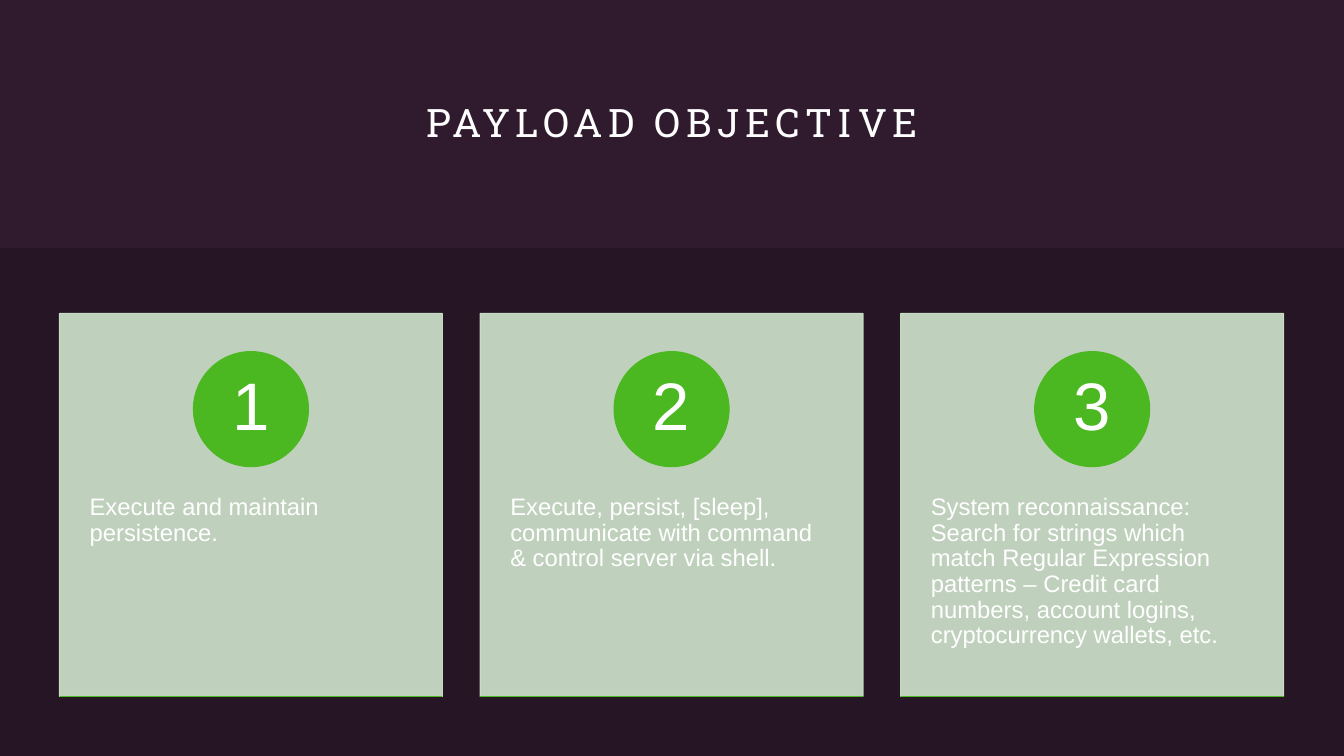
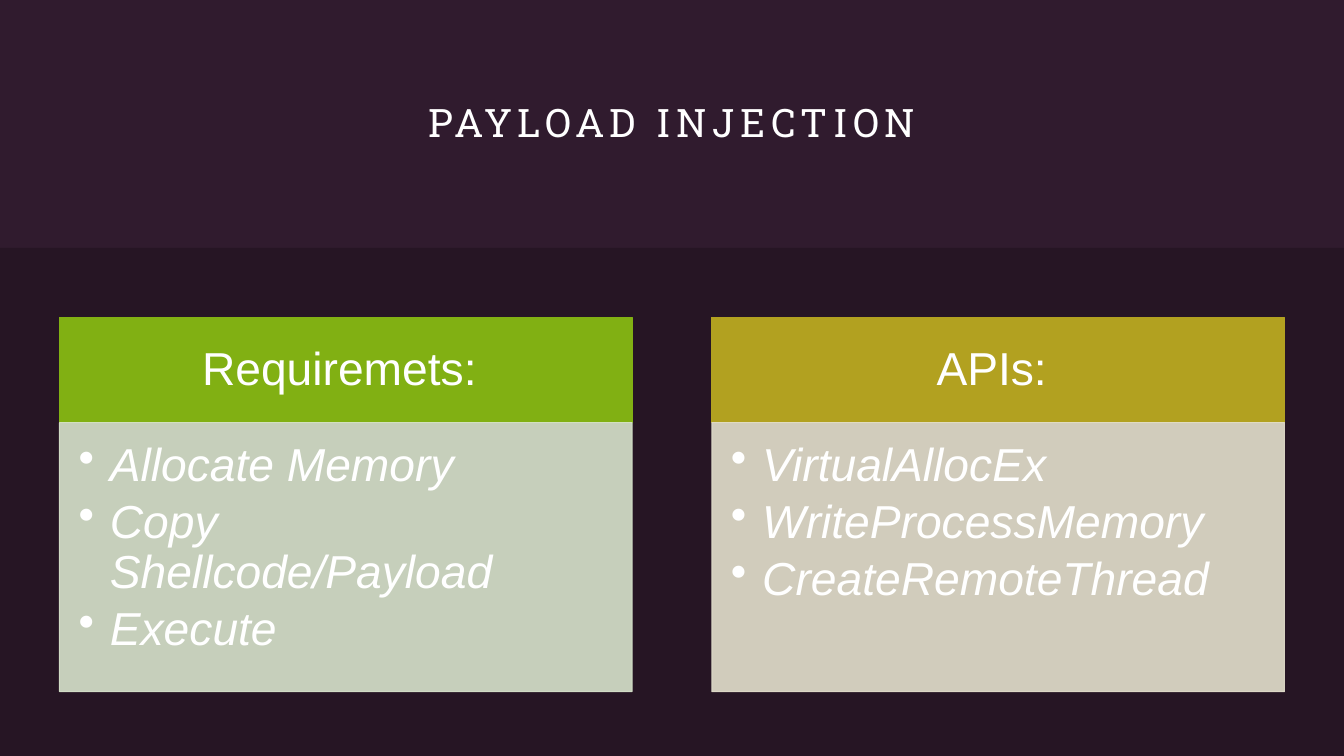
from dataclasses import dataclass

from lxml import etree
from pptx import Presentation
from pptx import util as u
from pptx.dml.color import RGBColor
from pptx.enum import shapes, text
from pptx.oxml import ns

WIDTH, HEIGHT = 33.87, 19.05
LEFT = 1.5
PLUM, NIGHT, WHITE = "301B2E", "261524", "FFFFFF"
GREEN, MINT = "4CB821", "D0E6CD"
RECT, OVAL = shapes.MSO_SHAPE.RECTANGLE, shapes.MSO_SHAPE.OVAL
TOP, MIDDLE = text.MSO_ANCHOR.TOP, text.MSO_ANCHOR.MIDDLE
CENTER, START = text.PP_ALIGN.CENTER, text.PP_ALIGN.LEFT


@dataclass
class Box:
    """A place on the slide, in centimetres."""
    x: float
    y: float
    w: float
    h: float

    def emu(self) -> list:
        """Give the four lengths in slide units."""
        return [u.Cm(n) for n in (self.x, self.y, self.w, self.h)]


@dataclass
class Style:
    """The look of a block of text; insets run left, top, right, bottom."""
    size: float
    align: int = CENTER
    anchor: int = MIDDLE
    inset: tuple = (0, 0, 0, 0)
    face: str = "Arial"
    lead: float = 0.9
    after: float = 0
    italic: bool = False
    bullet: bool = False
    track: int = 0


@dataclass
class Column:
    """A headed list with its two colours."""
    head: str
    items: list
    dark: str
    pale: str


TITLE = Style(28, face="Roboto Slab", lead=1, track=400)
DIGIT = Style(48)
NOTE = Style(17, START, TOP, (0.76, 4.57, 0.76, 0.9))
HEAD = Style(33, inset=(0.66, 0.38, 0.66, 0.38))
LIST = Style(33, START, TOP, (0.48, 0.48, 0.66, 0.74), after=5, italic=True, bullet=True)

GOALS = [
    "Execute and maintain persistence.",
    "Execute, persist, [sleep], communicate with command & control server via shell.",
    "System reconnaissance: Search for strings which match Regular Expression "
    "patterns – Credit card numbers, account logins, cryptocurrency wallets, etc.",
]
COLUMNS = [
    Column("Requiremets: ", ["Allocate Memory", "Copy Shellcode/Payload", "Execute"],
           "81B013", "D8E4CC"),
    Column("APIs: ", ["VirtualAllocEx", "WriteProcessMemory", "CreateRemoteThread"],
           "B2A120", "E4E0CD"),
]


def color(code: str) -> RGBColor:
    """Turn a hex string into a colour."""
    return RGBColor.from_string(code)


def assign(target, values: dict) -> None:
    """Set every named attribute on the target."""
    for name, value in values.items():
        setattr(target, name, value)


def write(shape, lines: list, style: Style) -> None:
    """Fill a shape with styled paragraphs."""
    frame = shape.text_frame
    sides = ("left", "top", "right", "bottom")
    assign(frame, {"word_wrap": True, "auto_size": text.MSO_AUTO_SIZE.NONE,
                   "vertical_anchor": style.anchor})
    assign(frame, {f"margin_{side}": u.Cm(n) for side, n in zip(sides, style.inset)})
    for i, line in enumerate(lines):
        para = frame.add_paragraph() if i else frame.paragraphs[0]
        assign(para, {"alignment": style.align, "line_spacing": style.lead,
                      "space_after": u.Pt(style.after)})
        run = para.add_run()
        run.text = line
        assign(run.font, {"name": style.face, "size": u.Pt(style.size),
                          "italic": style.italic})
        run.font.color.rgb = color(WHITE)
        if style.track:
            run._r.get_or_add_rPr().set("spc", str(style.track))
        if style.bullet:
            props = para._p.get_or_add_pPr()
            props.set("marL", str(u.Cm(0.79)))
            props.set("indent", str(u.Cm(-0.79)))
            etree.SubElement(props, ns.qn("a:buChar"), char="•")


def block(slide, kind: int, box: Box, fill: str, edge: bool = True, alpha: int = 100):
    """Add a filled shape, with an edge of the same colour if wanted."""
    shape = slide.shapes.add_shape(kind, *box.emu())
    shape.shadow.inherit = False
    shape.fill.solid()
    shape.fill.fore_color.rgb = color(fill)
    if edge:
        shape.line.color.rgb = color(fill)
        shape.line.width = u.Pt(0.75)
    else:
        shape.line.fill.background()
    if alpha < 100:
        for tint in list(shape._element.spPr.iter(ns.qn("a:srgbClr"))):
            etree.SubElement(tint, ns.qn("a:alpha"), val=str(alpha * 1000))
    return shape


def rule(slide, x: float, y: float, w: float) -> None:
    """Draw a thin green line."""
    line = slide.shapes.add_connector(
        shapes.MSO_CONNECTOR.STRAIGHT, u.Cm(x), u.Cm(y), u.Cm(x + w), u.Cm(y))
    line.line.color.rgb = color(GREEN)
    line.line.width = u.Pt(0.75)
    etree.SubElement(line._element.spPr, ns.qn("a:effectLst"))


def start(deck, name: str):
    """Add a slide with its title and lower band."""
    slide = deck.slides.add_slide(deck.slide_layouts[5])
    title = slide.shapes.title
    spots = ("left", "top", "width", "height")
    assign(title, dict(zip(spots, Box(3, 1.5, 27.87, 3.12).emu())))
    write(title, [name], TITLE)
    block(slide, RECT, Box(0, 6.25, WIDTH, HEIGHT - 6.25), NIGHT, edge=False)
    return slide


def card(slide, index: int, goal: str) -> None:
    """Draw one numbered goal."""
    side, disc = 9.65, 2.9
    x, y = LEFT + index * 10.6, 7.9
    panel = block(slide, RECT, Box(x, y, side, side), MINT, alpha=90)
    write(panel, [goal], NOTE)
    badge = block(slide, OVAL, Box(x + (side - disc) / 2, y + 0.96, disc, disc), GREEN)
    write(badge, [str(index + 1)], DIGIT)
    rule(slide, x, y + side, side)


def column(slide, index: int, col: Column) -> None:
    """Draw one headed list."""
    x, y, w, h = LEFT + index * 16.44, 8, 14.43, 2.65
    write(block(slide, RECT, Box(x, y, w, h), col.dark), [col.head], HEAD)
    body = block(slide, RECT, Box(x, y + h, w, 6.78), col.pale, alpha=90)
    write(body, col.items, LIST)


def main() -> None:
    """Build and save the deck."""
    deck = Presentation()
    assign(deck, {"slide_width": u.Cm(WIDTH), "slide_height": u.Cm(HEIGHT)})
    back = deck.slide_master.background.fill
    back.solid()
    back.fore_color.rgb = color(PLUM)
    pages = [("PAYLOAD OBJECTIVE", card, GOALS), ("PAYLOAD INJECTION", column, COLUMNS)]
    for name, draw, items in pages:
        slide = start(deck, name)
        for i, item in enumerate(items):
            draw(slide, i, item)
    deck.save("out.pptx")


if __name__ == "__main__":
    main()
